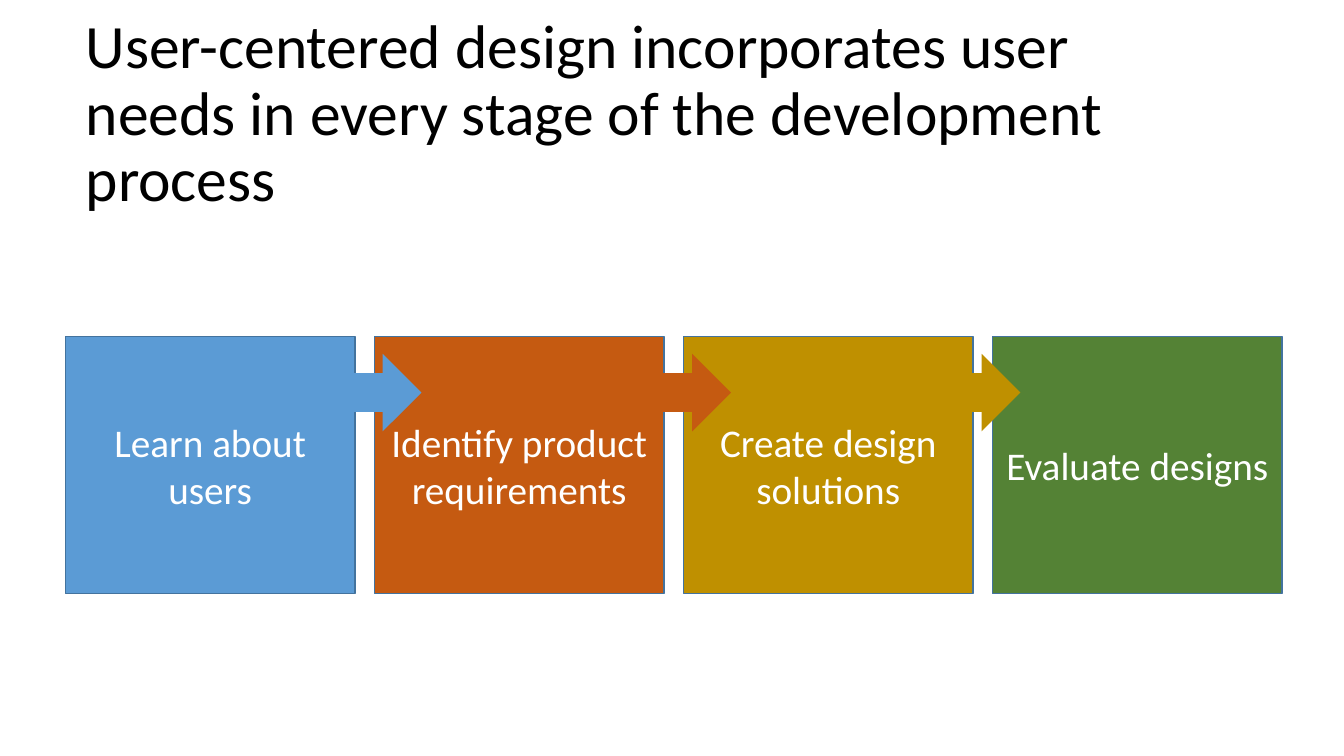
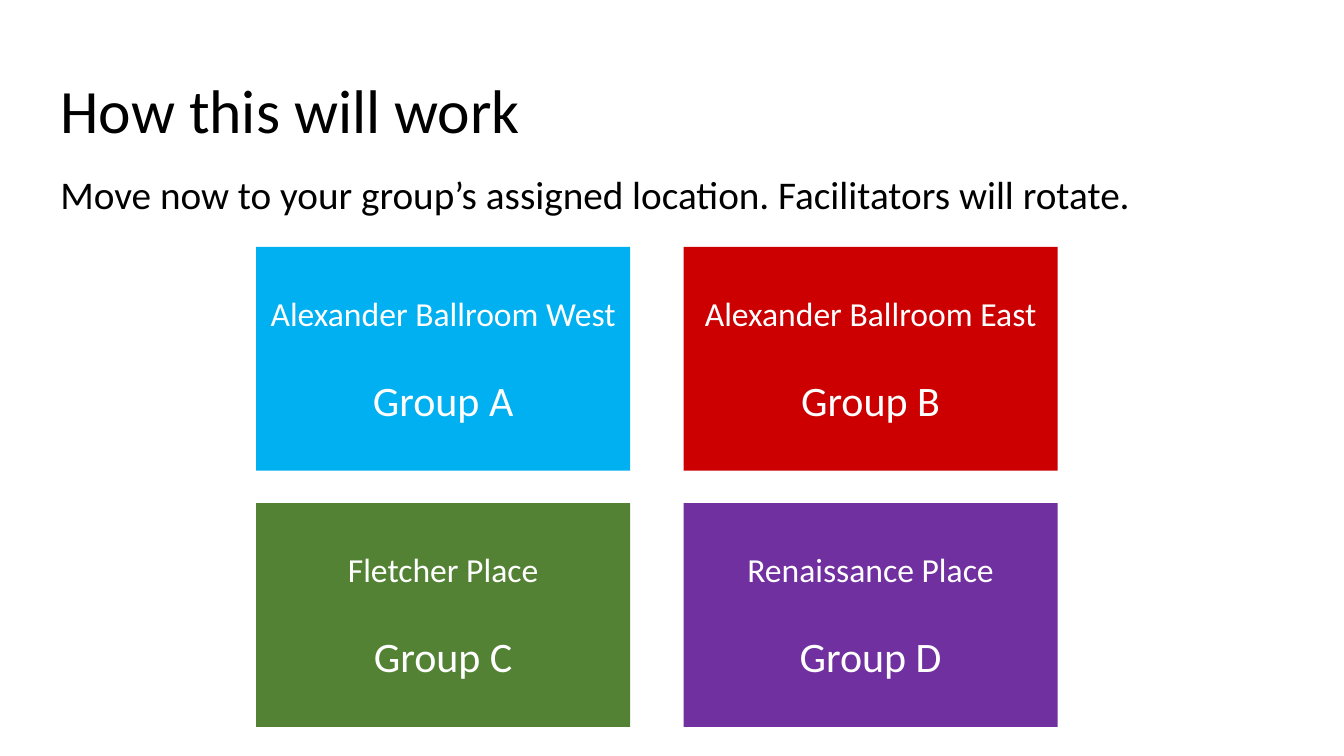
from lxml import etree
from pptx import Presentation
from pptx.dml.color import RGBColor
from pptx.enum.shapes import MSO_SHAPE
from pptx.enum.text import MSO_ANCHOR, MSO_AUTO_SIZE, PP_ALIGN
from pptx.oxml.ns import qn
from pptx.util import Pt

EMU_PER_PX = 9144  # 100 px to the inch
RECTANGLE, RIGHT_ARROW = MSO_SHAPE.RECTANGLE, MSO_SHAPE.RIGHT_ARROW
TOP, MIDDLE = MSO_ANCHOR.TOP, MSO_ANCHOR.MIDDLE
LEFT, CENTER = PP_ALIGN.LEFT, PP_ALIGN.CENTER
NO_AUTOFIT = MSO_AUTO_SIZE.NONE
TITLE_AND_CONTENT, TITLE_ONLY = 1, 5

FONT = "Calibri"
COLORS = {
    "black": "000000",
    "white": "FFFFFF",
    "outline": "43739E",
    "blue": "5B9BD5",
    "orange": "C55A11",
    "gold": "BF9000",
    "green": "548235",
    "sky": "00B0F0",
    "red": "CC0000",
    "purple": "7030A0",
}


def px(length):
    return round(length * EMU_PER_PX)


def color(name):
    return RGBColor.from_string(COLORS[name])


class SlideBuilder:
    """Holds the shared style and the slide being built."""

    def __init__(self, deck):
        self.deck = deck
        self.page = None

    def new_page(self, layout):
        self.page = self.deck.slides.add_slide(self.deck.slide_layouts[layout])

    def place(self, box, left, top, width, height):
        box.left, box.top = px(left), px(top)
        box.width, box.height = px(width), px(height)

    def set_text(self, box, lines, ink="white", align=CENTER, anchor=MIDDLE,
                 line_spacing=None):
        """Fill box with lines, each a (text, size, space before) tuple."""
        frame = box.text_frame
        frame.word_wrap = True
        frame.auto_size = NO_AUTOFIT
        frame.vertical_anchor = anchor
        for index, (text, size, before) in enumerate(lines):
            para = frame.add_paragraph() if index else frame.paragraphs[0]
            para.alignment = align
            para.line_spacing = line_spacing
            para.space_before = Pt(before)
            span = para.add_run()
            span.text = text
            span.font.name = FONT
            span.font.size = Pt(size)
            span.font.color.rgb = color(ink)

    def title(self, text, left, top):
        box = self.page.shapes.title
        self.place(box, left, top, 1150, 145)
        self.set_text(box, [(text, 44, 0)], ink="black", align=LEFT,
                      line_spacing=0.9)

    def body(self, text, left, top, width, height):
        box = self.page.placeholders[1]
        self.place(box, left, top, width, height)
        self.set_text(box, [(text, 28, 10)], ink="black", align=LEFT,
                      anchor=TOP, line_spacing=0.9)
        for para in box.text_frame.paragraphs:
            properties = para._p.get_or_add_pPr()
            properties.set("marL", "0")
            properties.set("indent", "0")
            etree.SubElement(properties, qn("a:buNone"))

    def shape(self, kind, left, top, width, height, fill, outline=None):
        box = self.page.shapes.add_shape(
            kind, px(left), px(top), px(width), px(height))
        box.shadow.inherit = False
        box.fill.solid()
        box.fill.fore_color.rgb = color(fill)
        if outline:
            box.line.color.rgb = color(outline)
            box.line.width = Pt(1)
        else:
            box.line.fill.background()
        return box

    def stage(self, text, left, top, fill):
        box = self.shape(RECTANGLE, left, top, 287, 255, fill, "outline")
        self.set_text(box, [(text, 28, 0)])

    def room_card(self, room, group, left, top, fill):
        box = self.shape(RECTANGLE, left, top, 371, 222, fill)
        box.text_frame.margin_top = px(46)
        self.set_text(box, [(room, 24, 0), (group, 30, 29)], anchor=TOP)


def add_process_page(builder):
    builder.new_page(TITLE_ONLY)
    builder.title("User-centered design incorporates user needs in every stage "
                  "of the development process", 75, 42)
    stages = [
        ("Learn about users", "blue"),
        ("Identify product requirements", "orange"),
        ("Create design solutions", "gold"),
        ("Evaluate designs", "green"),
    ]
    for index, (text, fill) in enumerate(stages):
        builder.stage(text, 65 + index * 306.5, 334, fill)
    arrow_lefts = [324, 631, 918]
    for left, (_, fill) in zip(arrow_lefts, stages):
        builder.shape(RIGHT_ARROW, left, 351, 94, 77, fill)


def add_rooms_page(builder):
    builder.new_page(TITLE_AND_CONTENT)
    builder.title("How this will work", 50, 40)
    builder.body("Move now to your group’s assigned location. "
                 "Facilitators will rotate.", 50, 169, 1212, 476)
    rooms = [
        ("Alexander Ballroom West", "Group A", "sky"),
        ("Alexander Ballroom East", "Group B", "red"),
        ("Fletcher Place", "Group C", "green"),
        ("Renaissance Place", "Group D", "purple"),
    ]
    for index, (room, group, fill) in enumerate(rooms):
        row, column = divmod(index, 2)
        builder.room_card(room, group, 254 + column * 424, 245 + row * 254, fill)


def main():
    deck = Presentation()
    deck.slide_width, deck.slide_height = px(1333), px(750)
    builder = SlideBuilder(deck)
    add_process_page(builder)
    add_rooms_page(builder)
    deck.save("out.pptx")


if __name__ == "__main__":
    main()
